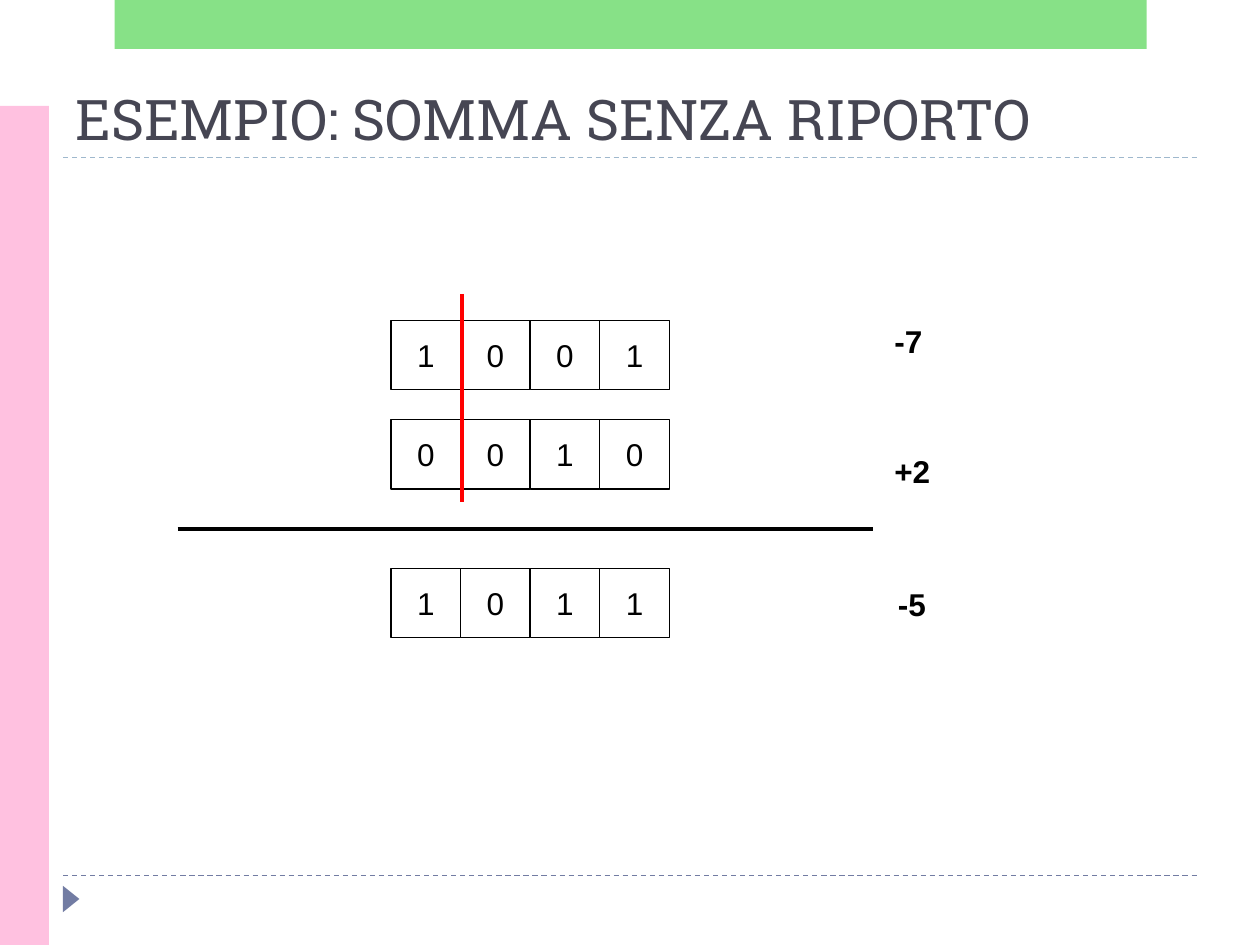
"""Build the slide on binary addition without carry."""
import pptx
import pptx.dml.color
import pptx.enum.dml
import pptx.enum.shapes
import pptx.enum.text
import pptx.oxml
import pptx.oxml.ns
import pptx.util
import lxml.etree

Pt = pptx.util.Pt
RGB = pptx.dml.color.RGBColor.from_string
SHAPE = pptx.enum.shapes.MSO_SHAPE
ANCHOR = pptx.enum.text.MSO_ANCHOR
COLORS = {
    "white": "FFFFFF", "black": "000000", "red": "FF0000", "title": "464653",
    "slate": "727CA3", "sky": "9FB8CD", "pink": "FFC1E0", "green": "62D862",
}


def add_line(x1, y1, x2, y2, color, width, dash=None):
    cx = s.shapes.add_connector(pptx.enum.shapes.MSO_CONNECTOR.STRAIGHT, Pt(x1), Pt(y1), Pt(x2), Pt(y2))
    cx.line.color.rgb = RGB(COLORS[color])
    cx.line.width = Pt(width)
    cx.line.dash_style = dash
    lxml.etree.SubElement(cx._element.spPr, pptx.oxml.ns.qn("a:effectLst"))


def set_text(sp, text, font, size, color, anchor, bold=False):
    tf = sp.text_frame
    tf.text = text
    tf.vertical_anchor = anchor
    r = tf.paragraphs[0].runs[0]
    r.font.name = font
    r.font.size = Pt(size)
    r.font.bold = bold
    r.font.color.rgb = RGB(COLORS[color])
    return tf


prs = pptx.Presentation()
prs.slide_width, prs.slide_height = Pt(720), Pt(540)
s = prs.slides.add_slide(prs.slide_layouts[6])
s.background.fill.solid()
s.background.fill.fore_color.rgb = RGB(COLORS["white"])

DASH = pptx.enum.dml.MSO_LINE.DASH
add_line(36, 500.4, 684, 500.4, "slate", 0.75, DASH)
add_line(36, 90, 684, 90, "sky", 0.75, DASH)

for kind, x, y, w, h, color, angle in [
    (SHAPE.ISOSCELES_TRIANGLE, 33.1, 509, 15.1, 9.4, "slate", 90),
    (SHAPE.RECTANGLE, 0, 60.5, 28, 479.5, "pink", 0),
    (SHAPE.RECTANGLE, 65.5, 0, 589.7, 28, "green", 0),
]:
    sp = s.shapes.add_shape(kind, Pt(x), Pt(y), Pt(w), Pt(h))
    sp.rotation = angle
    sp.shadow.inherit = False
    sp.fill.solid()
    sp.fill.fore_color.rgb = RGB(COLORS[color])
    sp.line.fill.background()
    if color == "green":
        clr = sp._element.spPr.find(".//" + pptx.oxml.ns.qn("a:srgbClr"))
        lxml.etree.SubElement(clr, pptx.oxml.ns.qn("a:alpha"), val="76000")

sp = s.shapes.add_textbox(Pt(36), Pt(39.6), Pt(648), Pt(50.4))
tf = set_text(sp, "ESEMPIO: SOMMA SENZA RIPORTO", "Roboto Slab", 32, "title", ANCHOR.BOTTOM)
tf.word_wrap = True

CELL = 39.75
for bits, y in [("1001", 183), ("0010", 239.7), ("1011", 324.7)]:
    grp = s.shapes.add_group_shape()
    for i, bit in enumerate(bits):
        sp = grp.shapes.add_shape(SHAPE.RECTANGLE, Pt(223.5 + i * CELL), Pt(y), Pt(CELL), Pt(CELL))
        sp.shadow.inherit = False
        sp.fill.solid()
        sp.fill.fore_color.rgb = RGB(COLORS["white"])
        sp.line.color.rgb = RGB(COLORS["black"])
        sp.line.width = Pt(0.75)
        tf = set_text(sp, bit, "Arial", 18, "black", ANCHOR.MIDDLE)
        tf.word_wrap = False
        tf.paragraphs[0].alignment = pptx.enum.text.PP_ALIGN.CENTER

for value, x, y in [("-7", 504, 180.7), ("+2", 504, 254.9), ("-5", 506, 330.5)]:
    sp = s.shapes.add_textbox(Pt(x), Pt(y), Pt(44), Pt(36))
    tf = set_text(sp, value, "Arial", 18, "black", ANCHOR.TOP, bold=True)
    tf.word_wrap = False
    tf.auto_size = pptx.enum.text.MSO_AUTO_SIZE.SHAPE_TO_FIT_TEXT

add_line(101.5, 302.2, 499, 302.2, "black", 2)
add_line(264, 168, 264, 287, "red", 2)

prs.save("out.pptx")
